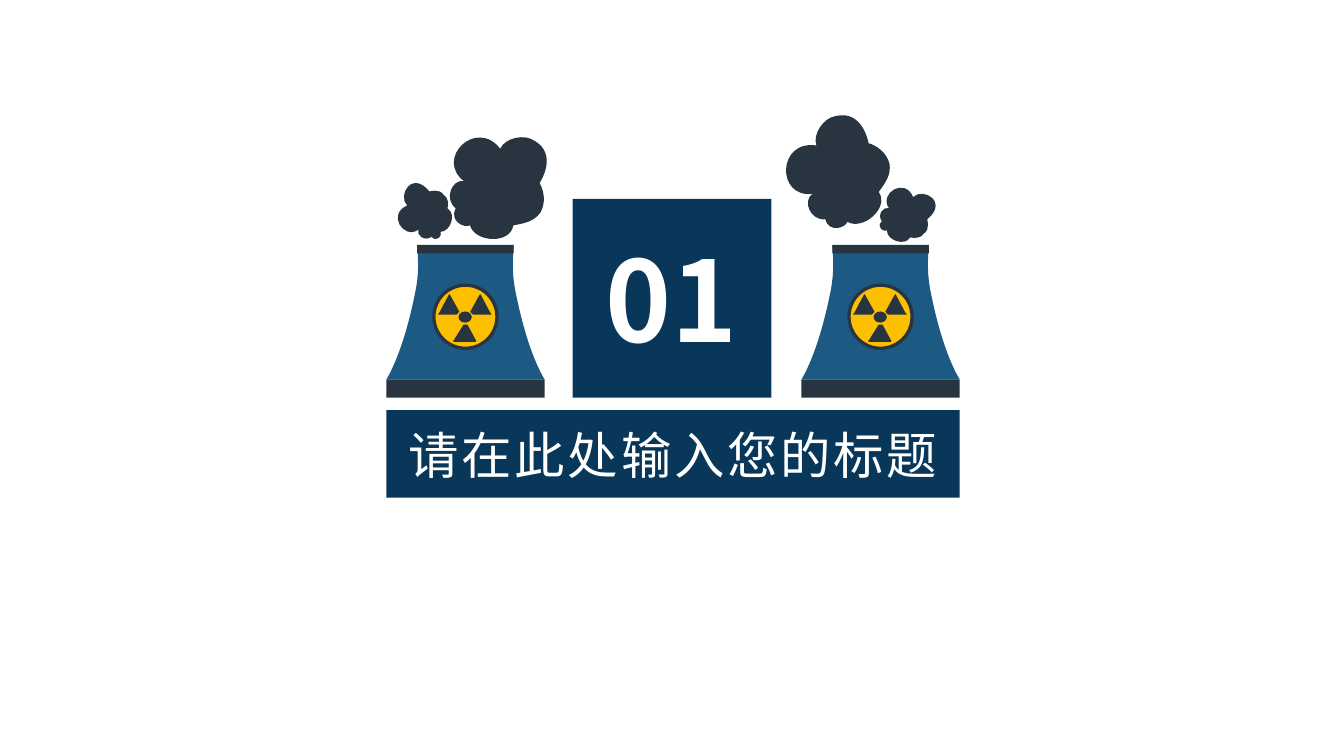
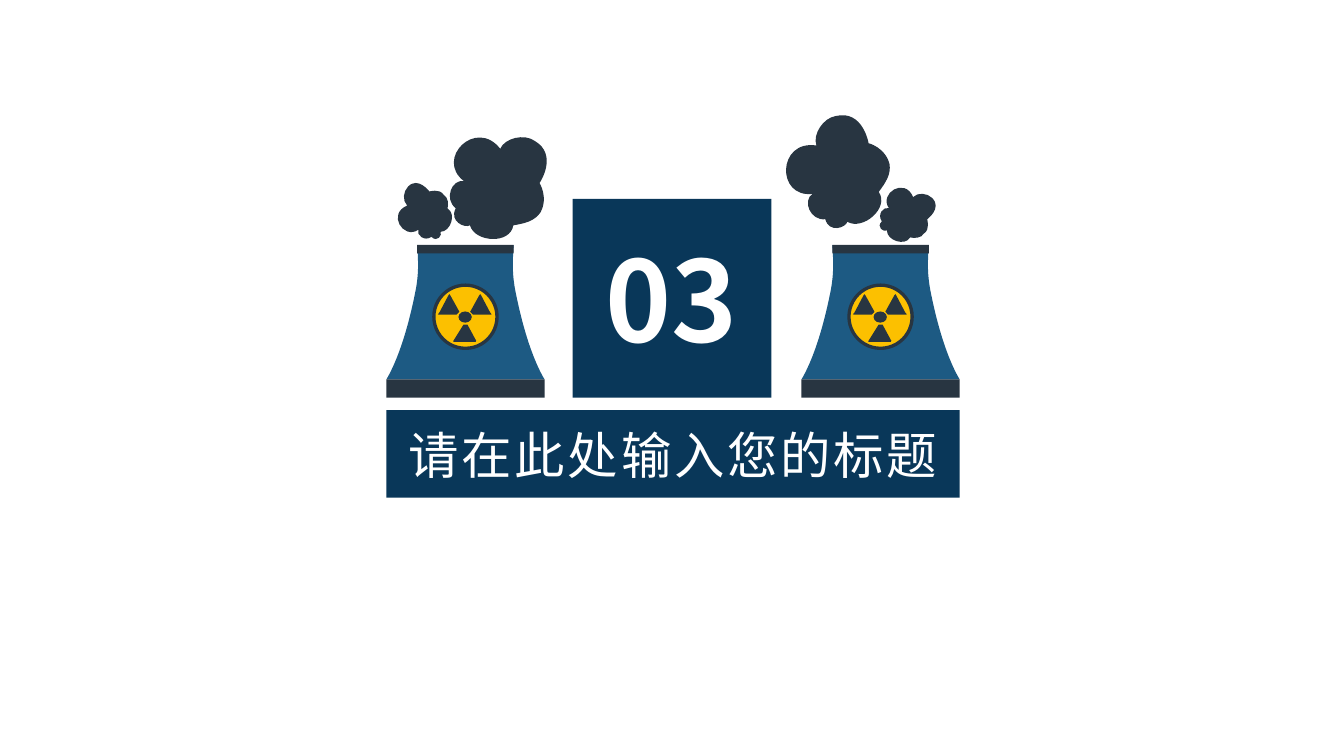
from lxml.etree import SubElement
from pptx import Presentation
from pptx.dml.color import RGBColor
from pptx.enum.shapes import MSO_SHAPE
from pptx.enum.text import MSO_ANCHOR, PP_ALIGN
from pptx.oxml.ns import qn
from pptx.util import Pt

FONT = "Noto Sans CJK SC"
NAVY, BLUE, DARK, YELLOW, WHITE = "093759", "1D5A83", "283541", "FCC000", "FFFFFF"

BIG_CLOUD = [
    (71.3, 16.6),
    (64.1, 11.5), (50.4, 14.4), (46.8, 22.3),
    (29.5, 0), (0, 29.5), (20.9, 45.4),
    (12.2, 43.9), (6.5, 58.3), (15.1, 64.8),
    (10.1, 74.2), (21.6, 79.2), (25.2, 77),
    (28.8, 89.3), (54, 90.7), (56.2, 77),
    (64.1, 75.6), (71.3, 74.2), (75.6, 67.7),
    (81.4, 56.9), (74.9, 46.8), (74.9, 46.8),
    (74.9, 46.8), (88.6, 26.6), (71.3, 16.6),
]
SMALL_CLOUD = [
    (15.1, 7.2),
    (11.5, 10.8), (10.8, 17.3), (14.4, 20.9),
    (0, 26.6), (11.5, 45.4), (22.3, 38.2),
    (20.9, 41.8), (26.6, 46.8), (31.7, 43.2),
    (36, 47.5), (39.6, 41.8), (38.2, 39.6),
    (45.4, 39.6), (49.7, 26.6), (43.2, 23),
    (43.9, 20.2), (43.9, 15.1), (40.3, 13),
    (37.4, 8.6), (30.2, 10.8), (30.2, 10.8),
    (30.2, 10.8), (22.3, 0), (15.1, 7.2),
]
TOWER_W, TOWER_H = 113, 96
TOWER_SIDE = [(91, 0), (90, 13), (90, 21), (92, 32), (100, 73), (110, 91), (TOWER_W, TOWER_H)]
EMBLEM = 47.5
SIDE_BLADE = [(19.4, 20.2), (13, 8.6), (12.2, 7.6), (11.5, 8.6), (5, 20.9),
              (4, 22), (5, 22.3), (17.3, 22.3)]
LOW_BLADE = [(22.3, 29.5), (25.2, 29.5), (31.4, 41), (31, 41.8), (15.1, 41.8), (15.1, 41)]

LEFT_SMOKE = [(BIG_CLOUD, 34.5, 7, 0), (SMALL_CLOUD, 0.5, 49, 0)]
RIGHT_SMOKE = [(BIG_CLOUD, -19.5, 0, 316.4), (SMALL_CLOUD, 52, 50.5, 90)]


def rgb(color):
    return RGBColor.from_string(color)


def paint(sp, color):
    sp.shadow.inherit = False
    sp.fill.solid()
    sp.fill.fore_color.rgb = rgb(color)
    sp.line.fill.background()
    return sp


def preset(shapes, kind, x, y, w, h, color):
    return paint(shapes.add_shape(kind, Pt(x), Pt(y), Pt(w), Pt(h)), color)


def outline(shapes, points, x, y, color, curved=False, rotation=0):
    points = [(Pt(px), Pt(py)) for px, py in points]
    builder = shapes.build_freeform(*points[0], scale=1.0)
    builder.add_line_segments(points[1:], close=True)
    sp = paint(builder.convert_to_shape(Pt(x), Pt(y)), color)
    if curved:
        bend(sp)
    sp.rotation = rotation
    return sp


def bend(sp):
    lines = list(sp._element.iter(qn("a:lnTo")))
    for first, second, third in zip(lines[::3], lines[1::3], lines[2::3]):
        first.tag = qn("a:cubicBezTo")
        for line in (second, third):
            first.append(line[0])
            line.getparent().remove(line)


def mirror(points, width):
    return [(width - x, y) for x, y in points]


def write(sp, text, size, color=WHITE, bold=False, spacing=0, inset=None):
    tf = sp.text_frame
    tf.word_wrap = True
    tf.vertical_anchor = MSO_ANCHOR.MIDDLE
    if inset is not None:
        tf.margin_left = tf.margin_right = tf.margin_top = tf.margin_bottom = Pt(inset)
    p = tf.paragraphs[0]
    p.alignment = PP_ALIGN.CENTER
    r = p.add_run()
    r.text = text
    r.font.name, r.font.size, r.font.bold = FONT, Pt(size), bold
    r.font.color.rgb = rgb(color)
    rPr = r._r.get_or_add_rPr()
    SubElement(rPr, qn("a:ea")).set("typeface", FONT)
    if spacing:
        rPr.set("spc", str(spacing * 100))


def add_emblem(shapes, x, y):
    preset(shapes, MSO_SHAPE.OVAL, x + 2, y + 2, EMBLEM - 4, EMBLEM - 4, YELLOW)
    for blade in (SIDE_BLADE, mirror(SIDE_BLADE, 46.5), LOW_BLADE):
        outline(shapes, blade, x, y, DARK)
    preset(shapes, MSO_SHAPE.OVAL, x + 18.75, y + 20, 9.5, 8, DARK)
    ring = preset(shapes, MSO_SHAPE.DONUT, x, y, EMBLEM, EMBLEM, DARK)
    ring.adjustments[0] = 0.05


def add_plant(s, x, y, smoke):
    shapes = s.shapes.add_group_shape().shapes
    for cloud, dx, dy, rotation in smoke:
        outline(shapes, cloud, x + dx, y + dy, DARK, curved=True, rotation=rotation)
    top = y + 98
    other_side = mirror(TOWER_SIDE, TOWER_W)[::-1]
    tower = TOWER_SIDE + [TOWER_SIDE[-1], other_side[0]] + other_side
    outline(shapes, tower, x, top, BLUE, curved=True)
    preset(shapes, MSO_SHAPE.RECTANGLE, x, top + TOWER_H, TOWER_W, 13, DARK)
    preset(shapes, MSO_SHAPE.RECTANGLE, x + 22, top, TOWER_W - 44, 6, DARK)
    add_emblem(shapes, x + (TOWER_W - EMBLEM) / 2, top + 27.5)


def add_section(prs, number, title):
    s = prs.slides.add_slide(prs.slide_layouts[6])
    x, y, w = 276, 77, 409.5
    square = preset(s.shapes, MSO_SHAPE.RECTANGLE, 409, y + 65, 142, 142, NAVY)
    write(square, number, 80, bold=True, inset=0)
    banner = preset(s.shapes, MSO_SHAPE.RECTANGLE, x, y + 216, w, 62.5, NAVY)
    write(banner, title, 36, spacing=2)
    add_plant(s, x, y, LEFT_SMOKE)
    add_plant(s, x + w - TOWER_W, y, RIGHT_SMOKE)


def main():
    prs = Presentation()
    prs.slide_width, prs.slide_height = Pt(960), Pt(540)
    for number in ("01", "03"):
        add_section(prs, number, "请在此处输入您的标题")
    prs.save("out.pptx")


if __name__ == "__main__":
    main()
